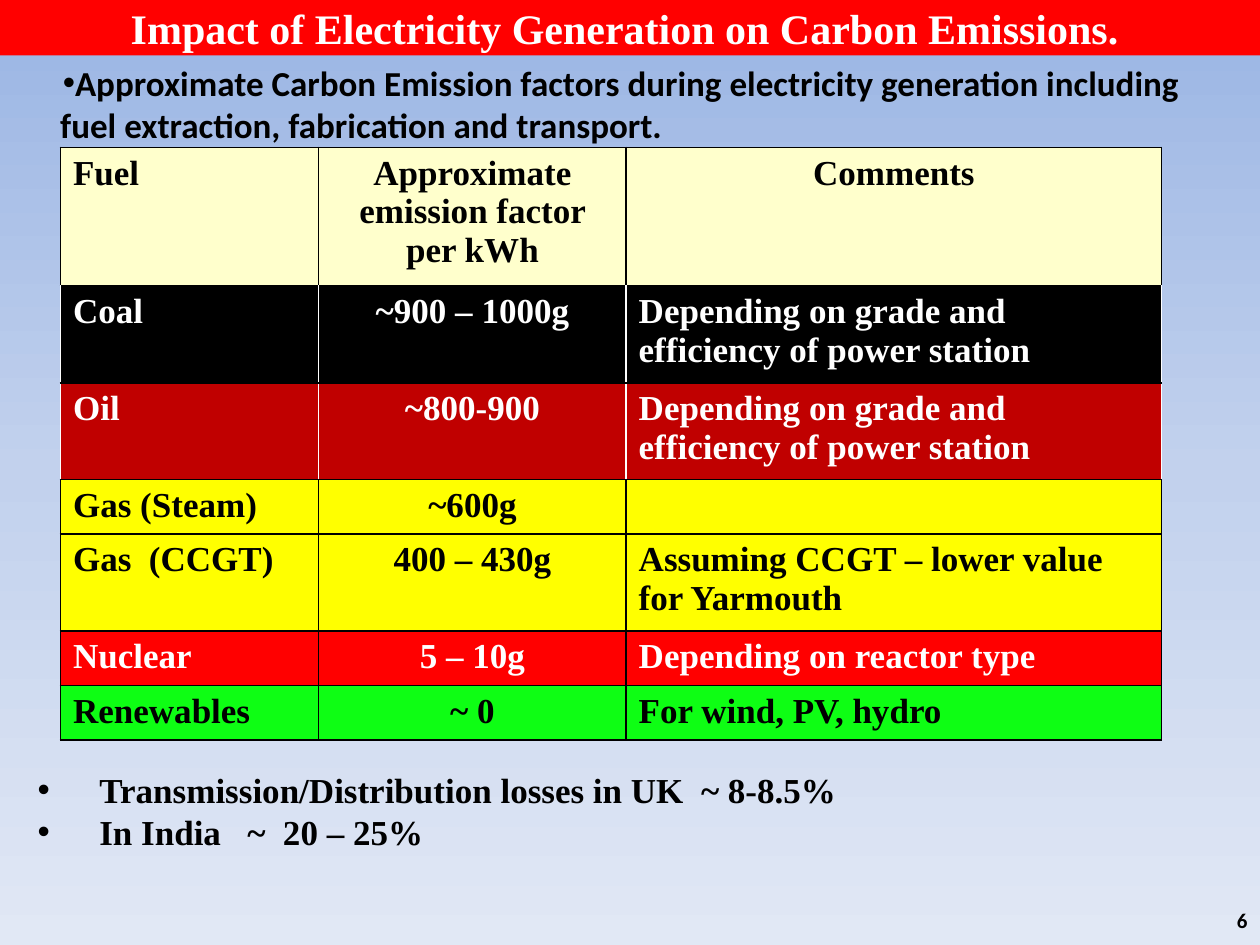
from copy import deepcopy
from dataclasses import dataclass

from lxml import etree
from pptx import Presentation
from pptx.dml.color import RGBColor
from pptx.enum.shapes import MSO_SHAPE
from pptx.enum.text import MSO_ANCHOR, PP_ALIGN
from pptx.oxml.ns import qn
from pptx.util import Inches, Pt

LEFT, CENTER, RIGHT = PP_ALIGN.LEFT, PP_ALIGN.CENTER, PP_ALIGN.RIGHT
TOP, MIDDLE = MSO_ANCHOR.TOP, MSO_ANCHOR.MIDDLE
RECTANGLE = MSO_SHAPE.RECTANGLE


@dataclass(frozen=True)
class Theme:
    sans: str = "Calibri"
    serif: str = "Times New Roman"
    title_size: int = 24
    text_size: int = 20
    number_size: int = 12
    black: str = "000000"
    white: str = "FFFFFF"
    red: str = "FF0000"
    dark_red: str = "C00000"
    cream: str = "FFFFCC"
    yellow: str = "FFFF00"
    green: str = "0EFE14"
    sky: tuple = ((0, "9AB5E4"), (0.5, "C2D1ED"), (1, "E1E8F5"))


THEME = Theme()


@dataclass(frozen=True)
class FuelRow:
    fuel: str
    factor: str
    comment: str
    fill: str
    color: str = THEME.black
    side_border: str = THEME.black
    comment_align: PP_ALIGN = LEFT


POWER_STATION = "Depending on grade and efficiency of power station"
ROWS = (
    FuelRow("Fuel", "Approximate emission factor per kWh", "Comments",
            THEME.cream, comment_align=CENTER),
    FuelRow("Coal", "~900 – 1000g", POWER_STATION,
            THEME.black, THEME.white, THEME.white),
    FuelRow("Oil", "~800-900", POWER_STATION,
            THEME.dark_red, THEME.white, THEME.white),
    FuelRow("Gas (Steam)", "~600g", "", THEME.yellow),
    FuelRow("Gas  (CCGT)", "400 – 430g",
            "Assuming CCGT – lower value for Yarmouth", THEME.yellow),
    FuelRow("Nuclear", "5 – 10g", "Depending on reactor type",
            THEME.red, THEME.white),
    FuelRow("Renewables", "~ 0", "For wind, PV, hydro", THEME.green),
)
COLUMN_WIDTHS = (2.05, 2.44, 4.25)
ROW_HEIGHT = 0.41


def rgb(color: str) -> RGBColor:
    return RGBColor.from_string(color)


def write(p, text: str, size: int = THEME.text_size, font: str = THEME.serif,
          color: str = THEME.black, align: PP_ALIGN = LEFT) -> None:
    p.alignment = align
    r = p.add_run()
    r.text = text
    r.font.name, r.font.size, r.font.bold = font, Pt(size), True
    r.font.color.rgb = rgb(color)


def add_bullet(p, margin: float, indent: float) -> None:
    pPr = p._p.get_or_add_pPr()
    pPr.set("marL", str(Inches(margin)))
    pPr.set("indent", str(Inches(indent)))
    etree.SubElement(pPr, qn("a:buFont")).set("typeface", "Arial")
    etree.SubElement(pPr, qn("a:buChar")).set("char", "•")


def add_text_frame(slide, left: float, top: float, width: float,
                   height: float, anchor: MSO_ANCHOR = TOP):
    box = slide.shapes.add_textbox(Inches(left), Inches(top),
                                   Inches(width), Inches(height))
    tf = box.text_frame
    tf.word_wrap, tf.vertical_anchor = True, anchor
    return tf


def paint_background(slide) -> None:
    fill = slide.background.fill
    fill.gradient()
    fill.gradient_angle = 270
    stop_list = slide.element.find(".//" + qn("a:gsLst"))
    stop_list.append(deepcopy(stop_list[-1]))
    for stop, (position, color) in zip(fill.gradient_stops, THEME.sky):
        stop.position = position
        stop.color.rgb = rgb(color)


def add_title_bar(slide, text: str) -> None:
    sp = slide.shapes.add_shape(RECTANGLE, 0, 0, Inches(10), Inches(0.44))
    sp.shadow.inherit = False
    sp.fill.solid()
    sp.fill.fore_color.rgb = rgb(THEME.red)
    sp.line.fill.background()
    tf = sp.text_frame
    tf.margin_left = tf.margin_right = tf.margin_top = tf.margin_bottom = 0
    tf.vertical_anchor = MIDDLE
    write(tf.paragraphs[0], text, THEME.title_size, color=THEME.white,
          align=CENTER)


def set_borders(cell, side_color: str) -> None:
    tcPr = cell._tc.get_or_add_tcPr()
    colors = {"L": side_color, "R": side_color,
              "T": THEME.black, "B": THEME.black}
    for i, (side, color) in enumerate(colors.items()):
        ln = etree.Element(qn(f"a:ln{side}"), w=str(Pt(1)))
        fill = etree.SubElement(ln, qn("a:solidFill"))
        etree.SubElement(fill, qn("a:srgbClr")).set("val", color)
        tcPr.insert(i, ln)


def add_fuel_table(slide) -> None:
    table = slide.shapes.add_table(
        len(ROWS), len(COLUMN_WIDTHS), Inches(0.48), Inches(1.17),
        Inches(sum(COLUMN_WIDTHS)), Inches(ROW_HEIGHT * len(ROWS))).table
    table.first_row = table.horz_banding = False
    for column, width in zip(table.columns, COLUMN_WIDTHS):
        column.width = Inches(width)
    for i, row in enumerate(ROWS):
        table.rows[i].height = Inches(ROW_HEIGHT)
        contents = ((row.fuel, LEFT), (row.factor, CENTER),
                    (row.comment, row.comment_align))
        for j, (text, align) in enumerate(contents):
            cell = table.cell(i, j)
            cell.fill.solid()
            cell.fill.fore_color.rgb = rgb(row.fill)
            set_borders(cell, row.side_border)
            if text:
                write(cell.text_frame.paragraphs[0], text, color=row.color,
                      align=align)


def main() -> None:
    prs = Presentation()
    prs.slide_width, prs.slide_height = Inches(10), Inches(7.5)
    slide = prs.slides.add_slide(prs.slide_layouts[6])
    paint_background(slide)

    intro = add_text_frame(slide, 0, 0.44, 9.66, 0.81).paragraphs[0]
    intro.space_before = Pt(4)
    add_bullet(intro, 0.38, 0.02)
    write(intro, "Approximate Carbon Emission factors during electricity "
          "generation including fuel extraction, fabrication and transport.",
          font=THEME.sans)

    number = add_text_frame(slide, 7.67, 7.1, 2.33, 0.4, MIDDLE)
    write(number.paragraphs[0], "6", THEME.number_size, THEME.sans,
          align=RIGHT)

    add_title_bar(
        slide, "Impact of Electricity Generation on Carbon Emissions. ")
    add_fuel_table(slide)

    losses = add_text_frame(slide, 0.2, 6.05, 9.35, 0.77)
    for i, text in enumerate((
            "Transmission/Distribution losses in UK  ~ 8-8.5%",
            "In India   ~  20 – 25%")):
        p = losses.add_paragraph() if i else losses.paragraphs[0]
        add_bullet(p, 0.49, -0.49)
        write(p, text)

    prs.save("out.pptx")


if __name__ == "__main__":
    main()
